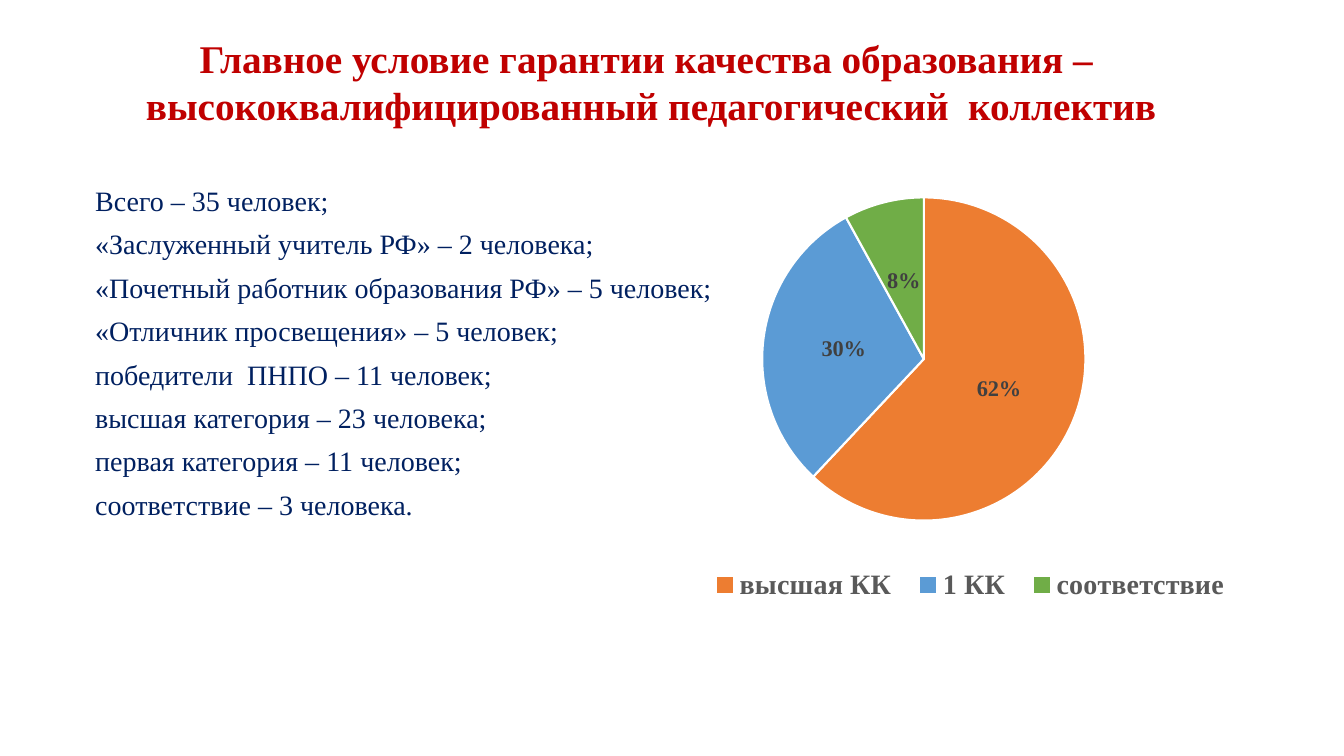
import pptx
import pptx.util
import pptx.chart.data
import pptx.dml.color
import pptx.enum.chart
import pptx.enum.text
import lxml.etree

Pt = pptx.util.Pt
RGBColor = pptx.dml.color.RGBColor
RED = RGBColor(0xC0, 0x00, 0x00)
NAVY = RGBColor(0x00, 0x20, 0x60)
WHITE = RGBColor(0xFF, 0xFF, 0xFF)
DARK = RGBColor(0x40, 0x40, 0x40)
GRAY = RGBColor(0x59, 0x59, 0x59)
ORANGE = RGBColor(0xED, 0x7D, 0x31)
BLUE = RGBColor(0x5B, 0x9B, 0xD5)
GREEN = RGBColor(0x70, 0xAD, 0x47)

TITLE = "Главное условие гарантии качества образования –  высококвалифицированный педагогический  коллектив"
STAFF = [
    "Всего – 35 человек;",
    "«Заслуженный учитель РФ» – 2 человека;",
    "«Почетный работник образования РФ» – 5 человек;",
    "«Отличник просвещения» – 5 человек;",
    "победители  ПНПО – 11 человек;",
    "высшая категория – 23 человека;",
    "первая категория – 11 человек;",
    "соответствие – 3 человека.",
]
CATEGORIES = [("высшая КК", 62, ORANGE), ("1 КК", 30, BLUE), ("соответствие", 8, GREEN)]


class Deck:
    font = "Times New Roman"

    def __init__(self, prs):
        self.s = prs.slides.add_slide(prs.slide_layouts[6])

    def style(self, font, size, color, bold=False):
        font.name = self.font
        font.size = Pt(size)
        font.bold = bold
        font.color.rgb = color

    def text(self, box, lines, size, color, bold=False, align=None, inset=0, before=0, after=0):
        tf = self.s.shapes.add_textbox(*map(Pt, box)).text_frame
        tf.word_wrap = True
        tf.margin_left = tf.margin_right = Pt(2 * inset)
        tf.margin_top = tf.margin_bottom = Pt(inset)
        for i, line in enumerate(lines):
            p = tf.add_paragraph() if i else tf.paragraphs[0]
            p.alignment = align
            p.space_before = Pt(before if i else 0)
            p.space_after = Pt(after)
            r = p.add_run()
            r.text = line
            self.style(r.font, size, color, bold)

    def layout(self, parent, after, values):
        ns = parent.nsmap["c"]
        for old in parent.findall(f"{{{ns}}}layout"):
            parent.remove(old)
        layout = lxml.etree.Element(f"{{{ns}}}layout")
        manual = lxml.etree.SubElement(layout, f"{{{ns}}}manualLayout")
        for tag, value in values:
            lxml.etree.SubElement(manual, f"{{{ns}}}{tag}").set("val", str(value))
        if after is None:
            parent.insert(0, layout)
        else:
            after.addnext(layout)

    def pie(self, box, slices, plot_box, legend_box):
        data = pptx.chart.data.CategoryChartData()
        data.categories = [name for name, _, _ in slices]
        data.add_series("Категории", [value for _, value, _ in slices])
        kind = pptx.enum.chart.XL_CHART_TYPE.PIE
        chart = self.s.shapes.add_chart(kind, *map(Pt, box), data).chart
        chart.has_title = False
        self.style(chart.font, 10, DARK)

        chart.has_legend = True
        legend = chart.legend
        legend.position = pptx.enum.chart.XL_LEGEND_POSITION.BOTTOM
        legend.include_in_layout = False
        self.style(legend.font, 20, GRAY, True)

        plot = chart.plots[0]
        plot.vary_by_categories = True
        for i, (_, _, color) in enumerate(slices):
            fmt = plot.series[0].points[i].format
            fmt.fill.solid()
            fmt.fill.fore_color.rgb = color
            fmt.line.color.rgb = WHITE
            fmt.line.width = Pt(1.5)
        plot.has_data_labels = True
        labels = plot.data_labels
        labels.show_value = False
        labels.show_percentage = True
        labels.number_format = "0%"
        labels.number_format_is_linked = False
        labels.position = pptx.enum.chart.XL_LABEL_POSITION.CENTER
        self.style(labels.font, 16, DARK, True)

        area = chart.element.chart.plotArea
        edges = [("xMode", "edge"), ("yMode", "edge")]
        inner = [("layoutTarget", "inner")] + edges
        self.layout(area, None, inner + list(zip("xywh", plot_box)))
        key = area.getnext()
        self.layout(key, key[0], edges + list(zip("xywh", legend_box)))


def main():
    prs = pptx.Presentation()
    prs.slide_width, prs.slide_height = Pt(960), Pt(540)
    deck = Deck(prs)
    deck.text((68, 131, 441, 260), STAFF, 20, NAVY, before=6, after=1)
    deck.text((90, 21, 750, 124.5), [TITLE], 28, RED, bold=True,
              align=pptx.enum.text.PP_ALIGN.CENTER, inset=3.6)
    deck.pie((447, 97, 513, 443), CATEGORIES, (0.19, 0, 0.45, 0.72), (0.1, 0.69, 0.76, 0.07))
    prs.save("out.pptx")


if __name__ == "__main__":
    main()
